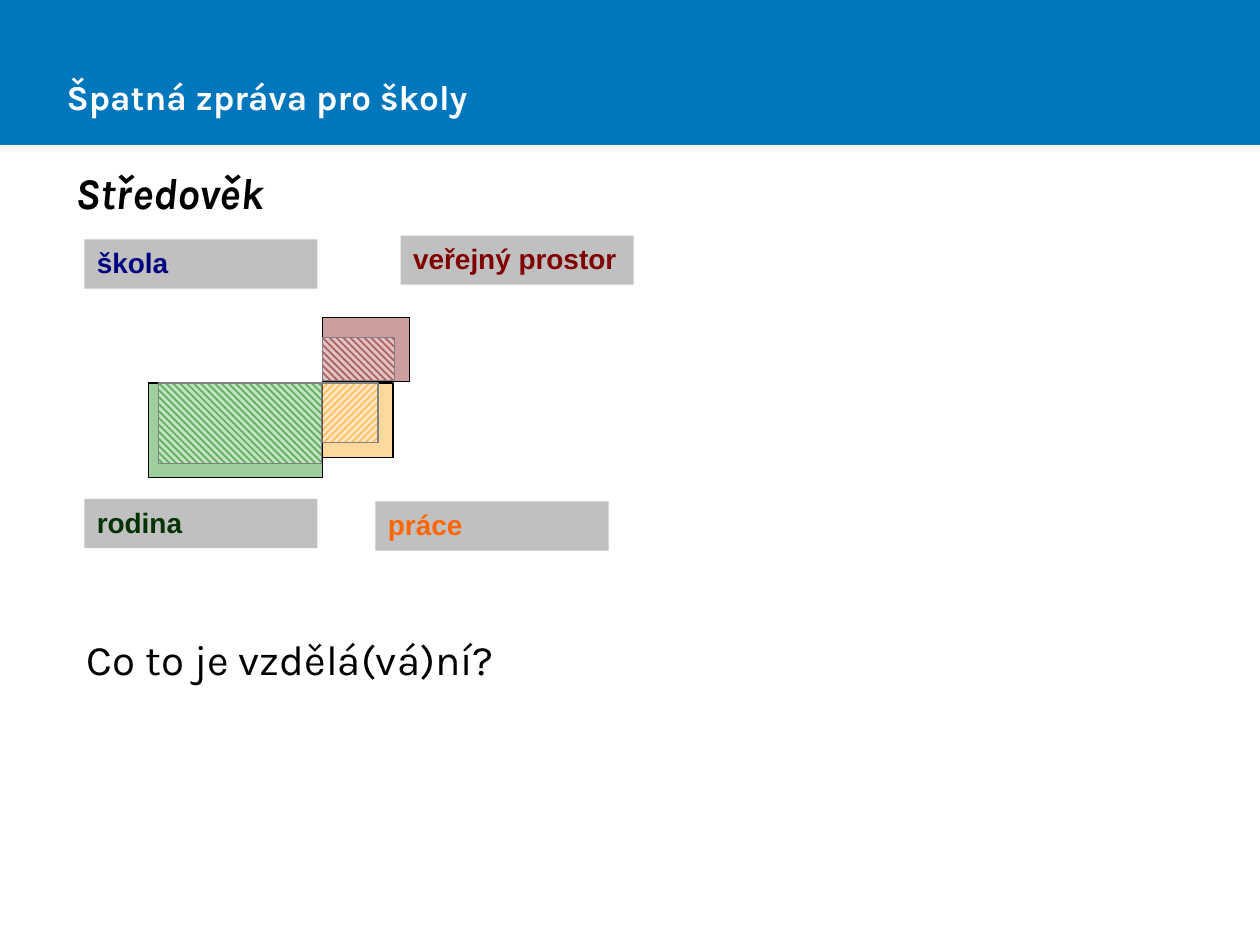
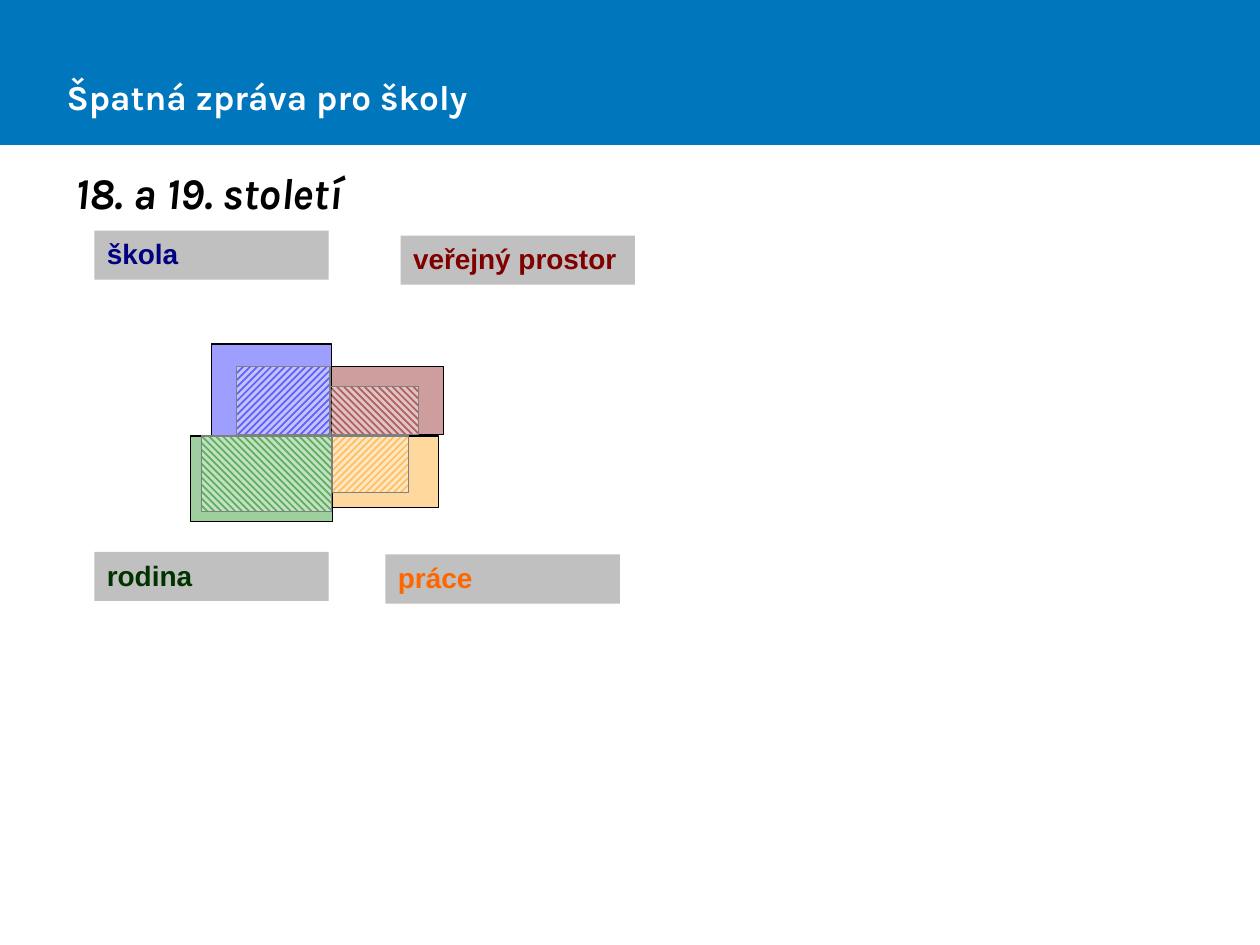
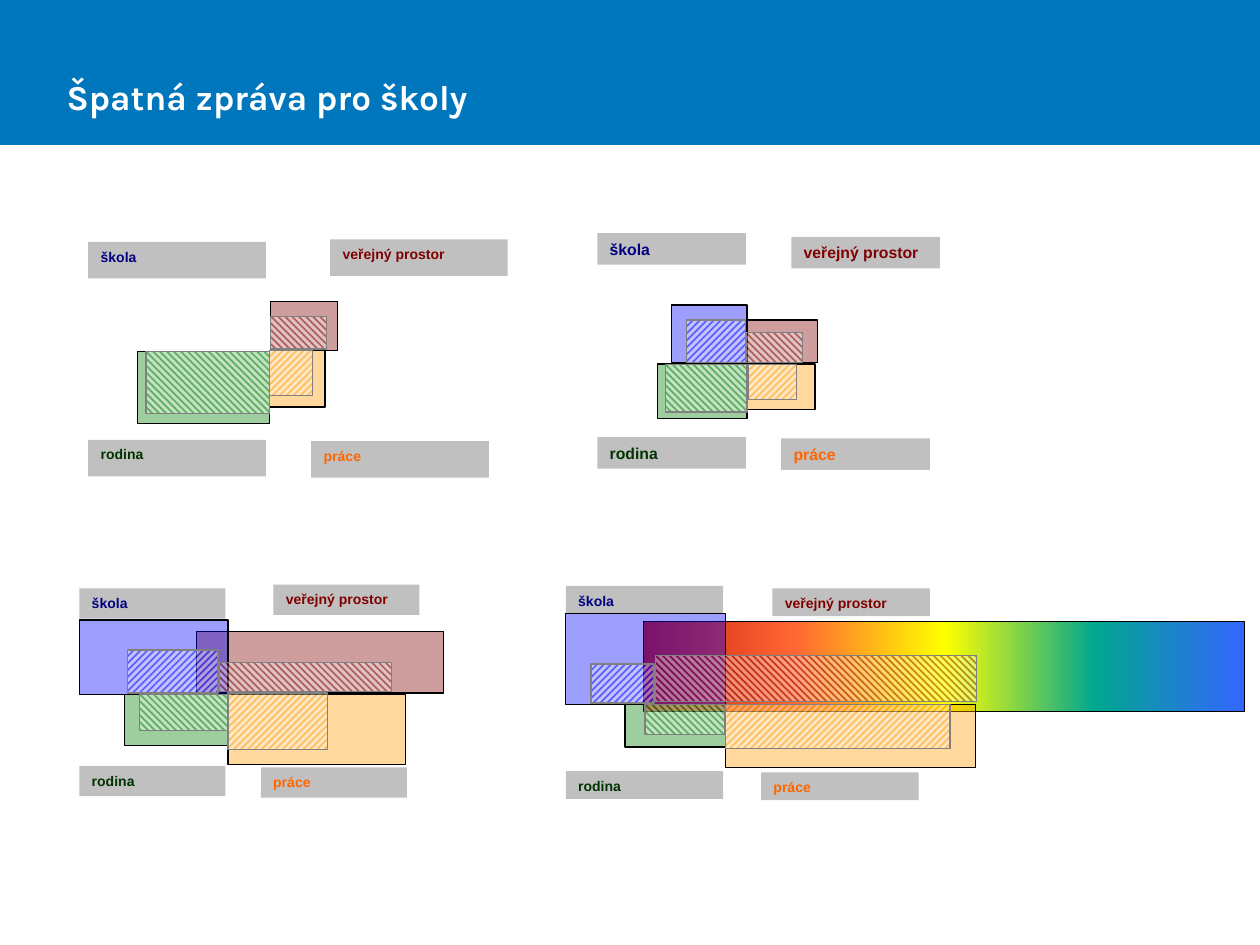
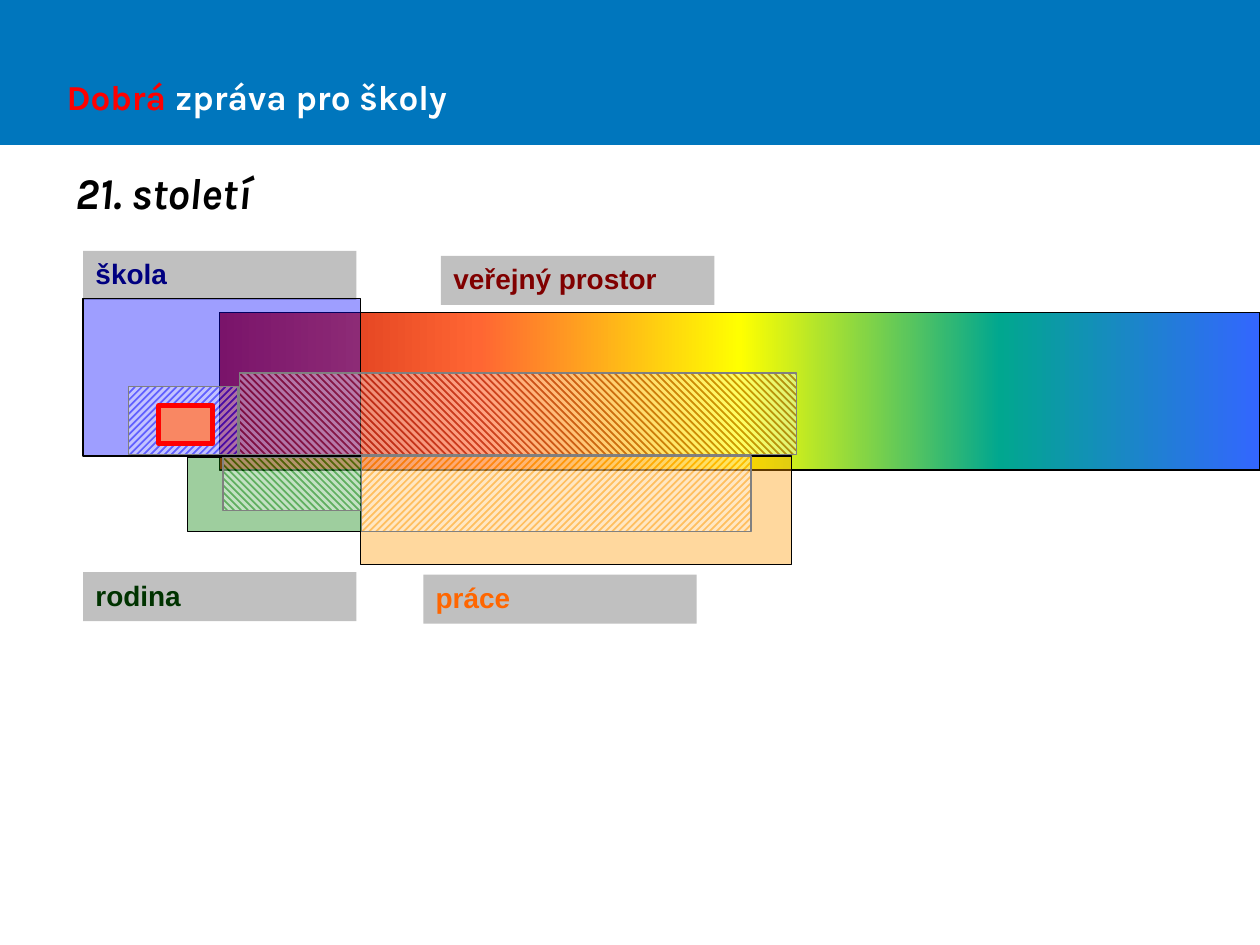
from lxml import etree
from pptx import Presentation
from pptx.dml.color import RGBColor
from pptx.enum import dml, shapes, text
from pptx.oxml.ns import qn
from pptx.util import Inches, Pt

BAND, GREY, BLACK, WHITE, RED = "0076BD", "C0C0C0", "000000", "FFFFFF", "FF0000"
RAINBOW = ["C62110", "FF6633", "FFFF00", "01A78F", "3366FF"]
ALPHA = 38000
DOWN, UP = dml.MSO_PATTERN.WIDE_DOWNWARD_DIAGONAL, dml.MSO_PATTERN.WIDE_UPWARD_DIAGONAL

# area: label, label colour, area colour, hatch
AREAS = {
    "public": ("veřejný prostor", "800000", "800000", DOWN),
    "work": ("práce", "FF6600", "FF9900", UP),
    "family": ("rodina", "003300", "008000", DOWN),
    "school": ("škola", "000080", "0000FF", UP),
}

BAD = [("Špatná ", WHITE), ("zpráva pro školy", WHITE)]
GOOD = [("Dobrá ", RED), ("zpráva pro školy", WHITE)]

MIDDLE = {
    "size": 16, "label": (1.85, 0.39),
    "tags": {"public": (3.18, 1.87), "work": (2.98, 3.98),
             "family": (0.67, 3.96), "school": (0.67, 1.9)},
    "zones": {"public": (2.56, 2.52, 0.69, 0.51), "work": (2.55, 3.04, 0.57, 0.59),
              "family": (1.18, 3.04, 1.38, 0.75)},
    "cores": {"family": (1.26, 3.04, 1.29, 0.64), "work": (2.55, 3.04, 0.45, 0.47),
              "public": (2.56, 2.68, 0.57, 0.34)},
}
MODERN = {
    "size": 16, "label": (1.86, 0.39),
    "tags": {"public": (3.18, 1.87), "work": (3.06, 4.4),
             "family": (0.75, 4.38), "school": (0.75, 1.83)},
    "zones": {"public": (2.63, 2.91, 0.89, 0.54), "work": (2.63, 3.46, 0.85, 0.57),
              "school": (1.68, 2.73, 0.95, 0.73), "family": (1.51, 3.46, 1.13, 0.68)},
    "cores": {"family": (1.6, 3.46, 1.03, 0.6), "school": (1.88, 2.91, 0.74, 0.54),
              "work": (2.64, 3.46, 0.6, 0.45), "public": (2.62, 3.07, 0.7, 0.38)},
}
TODAY = {
    "size": 16, "label": (2.17, 0.39), "rainbow": (1.74, 2.48, 8.26, 1.25),
    "tags": {"public": (3.5, 2.03), "work": (3.36, 4.56),
             "family": (0.66, 4.54), "school": (0.66, 1.99)},
    "zones": {"work": (2.86, 3.62, 3.42, 0.86), "school": (0.66, 2.37, 2.2, 1.25),
              "family": (1.49, 3.63, 1.38, 0.59)},
    "cores": {"family": (1.77, 3.63, 1.1, 0.42), "school": (1.02, 3.07, 0.87, 0.54),
              "work": (2.87, 3.62, 3.09, 0.6), "public": (1.9, 2.96, 4.42, 0.65)},
}
SMALL = [
    {"size": 8, "label": (1.25, 0.22), "rainbow": (5.11, 4.93, 4.77, 0.72),
     "tags": {"public": (6.13, 4.67), "work": (6.04, 6.13),
              "family": (4.49, 6.12), "school": (4.49, 4.65)},
     "zones": {"work": (5.76, 5.59, 1.98, 0.5), "school": (4.49, 4.87, 1.27, 0.72),
               "family": (4.96, 5.59, 0.8, 0.34)},
     "cores": {"family": (5.12, 5.59, 0.63, 0.24), "school": (4.69, 5.27, 0.5, 0.31),
               "work": (5.76, 5.59, 1.78, 0.35), "public": (5.2, 5.2, 2.55, 0.37)}},
    {"size": 8, "label": (1.41, 0.29),
     "tags": {"public": (2.62, 1.9), "work": (2.47, 3.5),
              "family": (0.7, 3.49), "school": (0.7, 1.92)},
     "zones": {"public": (2.15, 2.39, 0.53, 0.39), "work": (2.14, 2.78, 0.44, 0.45),
               "family": (1.09, 2.79, 1.05, 0.57)},
     "cores": {"family": (1.16, 2.79, 0.98, 0.49), "work": (2.14, 2.78, 0.34, 0.36),
               "public": (2.15, 2.51, 0.44, 0.26)}},
    {"size": 9, "label": (1.18, 0.25),
     "tags": {"public": (6.28, 1.88), "work": (6.2, 3.48),
              "family": (4.74, 3.47), "school": (4.74, 1.85)},
     "zones": {"public": (5.93, 2.54, 0.56, 0.34), "work": (5.93, 2.89, 0.54, 0.36),
               "school": (5.33, 2.42, 0.6, 0.46), "family": (5.22, 2.89, 0.71, 0.43)},
     "cores": {"family": (5.28, 2.89, 0.65, 0.38), "school": (5.45, 2.54, 0.47, 0.34),
               "work": (5.94, 2.89, 0.38, 0.28), "public": (5.92, 2.64, 0.45, 0.24)}},
    {"size": 8, "label": (1.16, 0.24),
     "tags": {"public": (2.17, 4.64), "work": (2.07, 6.09),
              "family": (0.63, 6.08), "school": (0.63, 4.67)},
     "zones": {"public": (1.56, 5.01, 1.96, 0.49), "work": (1.81, 5.51, 1.41, 0.56),
               "school": (0.63, 4.92, 1.18, 0.59), "family": (0.99, 5.51, 0.82, 0.41)},
     "cores": {"family": (1.11, 5.51, 0.7, 0.29), "school": (1.01, 5.16, 0.72, 0.34),
               "work": (1.81, 5.5, 0.79, 0.45), "public": (1.74, 5.26, 1.37, 0.23)}},
]

HEAD = {"size": Pt(25), "bold": True, "italic": True}
# title, lines of text (words, place, format), diagrams
PAGES = [
    (BAD, [("Středověk", (0.5, 1.31, 9, 0.52), HEAD),
           ("Co to je vzdělá(vá)ní?", (0.59, 5.02, 9, 0.52), {"size": Pt(24)})], [MIDDLE]),
    (BAD, [("18. a 19. století", (0.5, 1.31, 9, 5.39), HEAD)], [MODERN]),
    (BAD, [], SMALL),
    (GOOD, [("21. století", (0.5, 1.31, 9, 5.39), HEAD)], [TODAY]),
]


def rect(host, place, fill, line=None, width=0.75, hatch=None, clear=False):
    """Draw a plain, hatched or see-through rectangle; a list as fill is a gradient."""
    box = host.add_shape(shapes.MSO_SHAPE.RECTANGLE, *map(Inches, place))
    box.shadow.inherit = False
    if isinstance(fill, list):
        box.fill.gradient()
        box.fill.gradient_angle = 0
        stops = box._element.spPr.xpath("./a:gradFill/a:gsLst")[0]
        for stop in list(stops):
            stops.remove(stop)
        for i, tone in enumerate(fill):
            stop = etree.SubElement(stops, qn("a:gs"), pos=str(i * 100000 // (len(fill) - 1)))
            etree.SubElement(stop, qn("a:srgbClr"), val=tone)
    elif hatch:
        box.fill.patterned()
        box.fill.pattern = hatch
        box.fill.fore_color.rgb = RGBColor.from_string(fill)
        box.fill.back_color.rgb = RGBColor.from_string(WHITE)
    else:
        box.fill.solid()
        box.fill.fore_color.rgb = RGBColor.from_string(fill)
    if clear:
        for tone in box._element.spPr.xpath("./a:solidFill/a:srgbClr | ./a:pattFill//a:srgbClr"):
            etree.SubElement(tone, qn("a:alpha"), val=str(ALPHA))
    if line:
        box.line.color.rgb = RGBColor.from_string(line)
        box.line.width = Pt(width)
    else:
        box.line.fill.background()
    return box


def write(box, runs, style, anchor=text.MSO_ANCHOR.TOP):
    frame = box.text_frame
    frame.word_wrap = True
    frame.vertical_anchor = anchor
    para = frame.paragraphs[0]
    para.alignment = text.PP_ALIGN.LEFT
    for words, tone in runs:
        run = para.add_run()
        run.text = words
        run.font.color.rgb = RGBColor.from_string(tone)
        for key, value in style.items():
            setattr(run.font, key, value)
    return para


deck = Presentation()
deck.slide_width, deck.slide_height = Inches(10), Inches(7.5)

for title, lines, charts in PAGES:
    slide = deck.slides.add_slide(deck.slide_layouts[6])
    rect(slide.shapes, (0, 0, 10, 1.15), BAND)
    box = slide.shapes.add_textbox(*map(Inches, (0.43, 0.52, 9, 0.49)))
    write(box, title, {"name": "Karla", "size": Pt(20), "bold": True}, text.MSO_ANCHOR.MIDDLE)
    for words, place, style in lines:
        box = slide.shapes.add_textbox(*map(Inches, place))
        para = write(box, [(words, BLACK)], {"name": "Karla", **style})
        para.line_spacing = 0.9

    for chart in charts:
        group = slide.shapes.add_group_shape().shapes
        zones = chart["zones"]
        if "rainbow" in chart:
            rect(group, chart["rainbow"], RAINBOW, BLACK)
        # the right-hand zones lie under the labels, the left-hand ones above
        for side in (("public", "work"), ("school", "family")):
            for name in side:
                if name in zones:
                    rect(group, zones[name], AREAS[name][2], BLACK, clear=True)
            if "public" in side:
                for name, spot in chart["tags"].items():
                    words, tone = AREAS[name][:2]
                    tag = rect(group, spot + chart["label"], GREY)
                    style = {"name": "Arial", "size": Pt(chart["size"]), "bold": True}
                    write(tag, [(words, tone)], style)
        for name, place in chart["cores"].items():
            tone, hatch = AREAS[name][2:]
            rect(group, place, tone, "808080", hatch=hatch, clear=True)

    if title is GOOD:
        rect(slide.shapes, (1.26, 3.22, 0.43, 0.3), "F98763", RED, 3)

deck.save("out.pptx")
